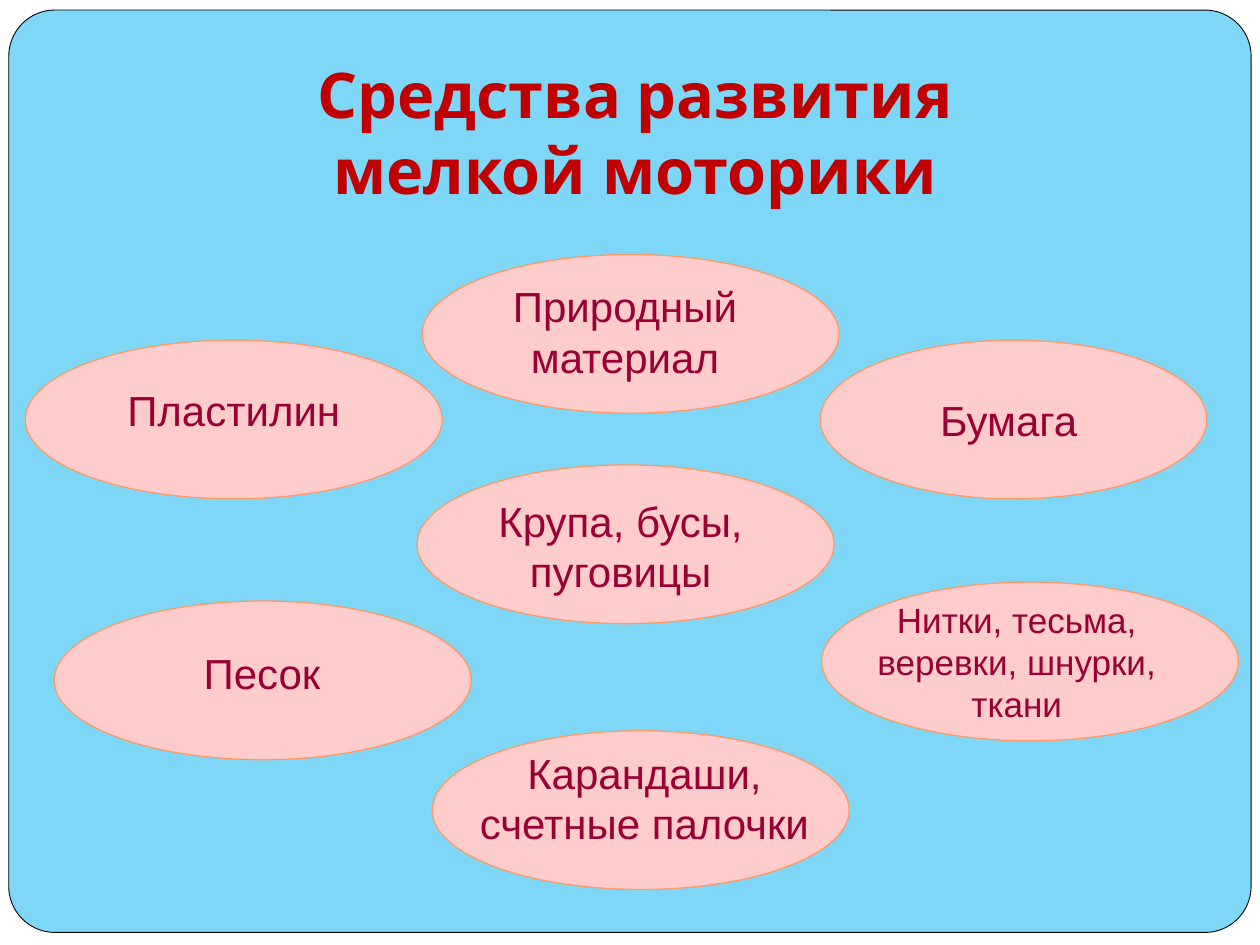
from dataclasses import dataclass

from pptx import Presentation
from pptx.dml.color import RGBColor
from pptx.enum.shapes import MSO_SHAPE
from pptx.enum.text import MSO_ANCHOR, MSO_AUTO_SIZE, PP_ALIGN
from pptx.util import Inches, Pt

WHITE = RGBColor(0xFF, 0xFF, 0xFF)
BLACK = RGBColor(0x00, 0x00, 0x00)
SKY = RGBColor(0x7F, 0xD7, 0xF7)
RED = RGBColor(0xC0, 0x00, 0x00)
PINK = RGBColor(0xFF, 0xCC, 0xCC)
ORANGE = RGBColor(0xFF, 0x99, 0x66)
BURGUNDY = RGBColor(0x99, 0x00, 0x33)

OVAL_HEIGHT = 1.26


@dataclass
class Means:
    """One means of development: an oval and the label laid over it."""
    text: str
    oval_left: float
    oval_top: float
    label: tuple[float, float, float, float]  # left, top, width, height
    oval_width: float = 3.31
    size: int = 24


MEANS = [
    Means("Крупа, бусы, пуговицы", 3.31, 3.69, (3.74, 3.88, 2.37, 0.91)),
    Means("Пластилин", 0.2, 2.7, (0.83, 3, 2.05, 0.5)),
    Means("Песок", 0.43, 4.77, (0.98, 5.09, 2.2, 0.5)),
    Means("Природный материал", 3.35, 2.02, (3.82, 2.18, 2.28, 0.9)),
    Means("Бумага", 6.51, 2.7, (7.14, 3.08, 1.73, 0.5), oval_width=3.07),
    Means("Нитки, тесьма, веревки, шнурки, ткани", 6.52, 4.62,
          (6.65, 4.7, 2.84, 1.1), size=20),
    Means("Карандаши, счетные палочки", 3.43, 5.8, (3.5, 5.88, 3.23, 0.9)),
]


def write_text(shape, text: str, *, font: str = "Arial", size: int = 24,
               color: RGBColor = BURGUNDY, bold: bool = False,
               auto_size=MSO_AUTO_SIZE.SHAPE_TO_FIT_TEXT) -> None:
    frame = shape.text_frame
    frame.word_wrap = True
    frame.auto_size = auto_size
    frame.vertical_anchor = MSO_ANCHOR.TOP
    paragraph = frame.paragraphs[0]
    paragraph.alignment = PP_ALIGN.CENTER
    run = paragraph.add_run()
    run.text = text
    run.font.name = font
    run.font.size = Pt(size)
    run.font.bold = bold
    run.font.color.rgb = color


def add_outlined(slide, kind, box, fill: RGBColor, line: RGBColor, weight: float):
    shape = slide.shapes.add_shape(kind, *map(Inches, box))
    shape.shadow.inherit = False
    shape.fill.solid()
    shape.fill.fore_color.rgb = fill
    shape.line.color.rgb = line
    shape.line.width = Pt(weight)
    return shape


def add_oval(slide, means: Means) -> None:
    box = (means.oval_left, means.oval_top, means.oval_width, OVAL_HEIGHT)
    add_outlined(slide, MSO_SHAPE.OVAL, box, PINK, ORANGE, 0.75)


def add_label(slide, means: Means) -> None:
    label = slide.shapes.add_textbox(*map(Inches, means.label))
    write_text(label, means.text, size=means.size)


def main() -> None:
    prs = Presentation()
    prs.slide_width, prs.slide_height = Inches(10), Inches(7.5)
    slide = prs.slides.add_slide(prs.slide_layouts[5])
    slide.background.fill.solid()
    slide.background.fill.fore_color.rgb = WHITE

    # Rounded panel, then the title brought in front of it
    panel = add_outlined(slide, MSO_SHAPE.ROUNDED_RECTANGLE,
                         (0.07, 0.08, 9.86, 7.32), SKY, BLACK, 0.5)
    panel.adjustments[0] = 0.05
    title = slide.shapes.title
    panel._element.addnext(title._element)
    title.left, title.top = Inches(2.03), Inches(0.39)
    title.width, title.height = Inches(6.02), Inches(1.31)
    write_text(title, "Средства развития мелкой моторики", font="Karla",
               size=36, color=RED, bold=True, auto_size=MSO_AUTO_SIZE.NONE)

    # Ovals with their labels
    for means in MEANS:
        add_oval(slide, means)
        add_label(slide, means)

    prs.save("out.pptx")


if __name__ == "__main__":
    main()
